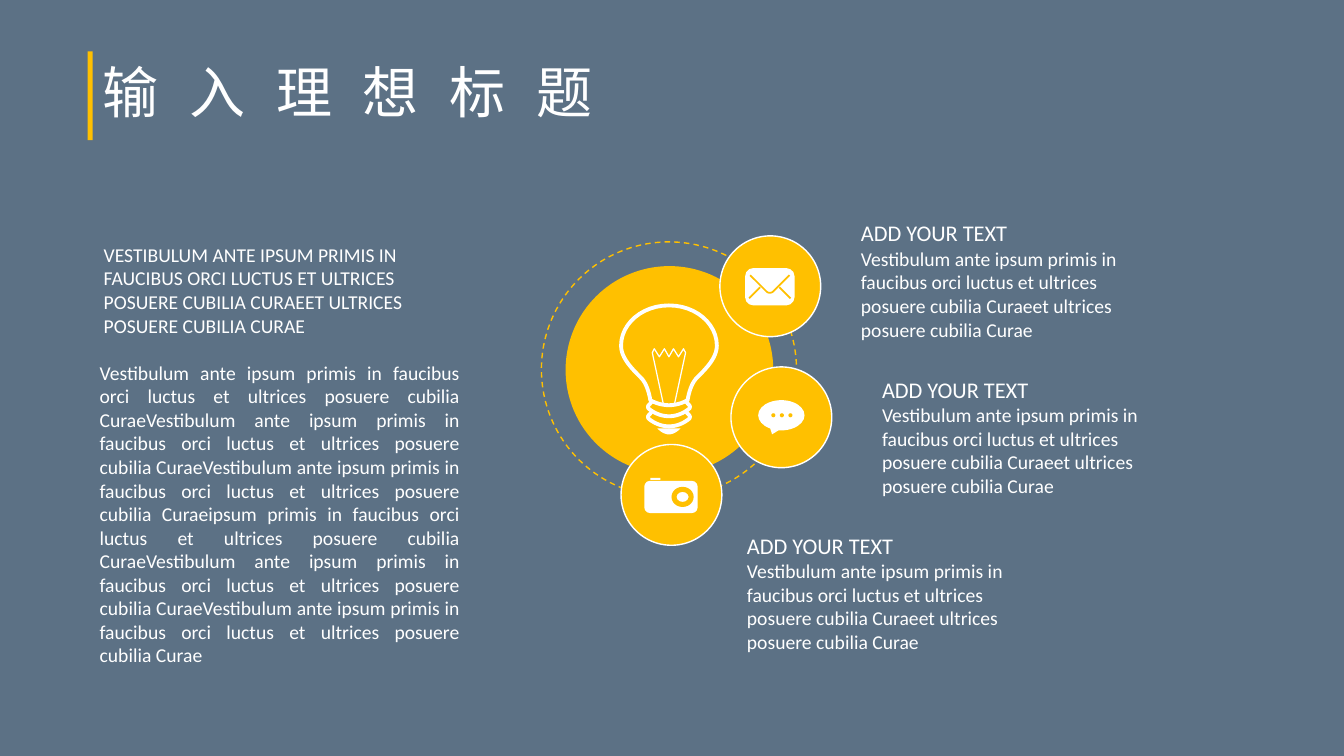
from lxml.etree import SubElement
from pptx import Presentation
from pptx.dml.color import RGBColor
from pptx.enum.dml import MSO_LINE
from pptx.enum.shapes import MSO_SHAPE
from pptx.enum.text import MSO_ANCHOR, PP_ALIGN
from pptx.oxml.ns import qn
from pptx.util import Inches, Pt

SLATE, AMBER, WHITE = "5C7185", "FFC000", "FFFFFF"
LATIN_FONT, CHINESE_FONT = "Calibri", "Noto Sans CJK SC"
BULB_CENTER = 6.635

PHRASE = "Vestibulum ante ipsum primis in faucibus orci luctus et ultrices posuere cubilia Curae"
SHORT_TEXT = PHRASE + "et ultrices posuere cubilia Curae"
LONG_TEXT = PHRASE * 3 + PHRASE.removeprefix("Vestibulum ante ") + PHRASE * 2
ITEMS = [(8.44, 2.13), (8.65, 3.68), (7.31, 5.23)]


def color(hex_string):
    return RGBColor.from_string(hex_string)


def apply_style(shape, fill=None, line=None, width=1.0):
    shape.shadow.inherit = False
    if fill:
        shape.fill.solid()
        shape.fill.fore_color.rgb = color(fill)
    else:
        shape.fill.background()
    if line:
        shape.line.color.rgb = color(line)
        shape.line.width = Pt(width)
    else:
        shape.line.fill.background()


def add_preset(shapes, preset, left, top, width, height, adjustments=(), **style):
    shape = shapes.add_shape(
        preset, Inches(left), Inches(top), Inches(width), Inches(height))
    for index, value in enumerate(adjustments):
        shape.adjustments[index] = value
    apply_style(shape, **style)
    return shape


def add_outline(shapes, points, closed=False, **style):
    vertices = [(Inches(x), Inches(y)) for x, y in points]
    builder = shapes.build_freeform(*vertices[0])
    builder.add_line_segments(vertices[1:], close=closed)
    apply_style(builder.convert_to_shape(), **style)


def curve(start, *segments, steps=12):
    """Return points along joined cubic curves; a segment is two controls and an end."""
    points = [start]
    for first, second, end in segments:
        for step in range(1, steps + 1):
            t = step / steps
            weights = ((1 - t) ** 3, 3 * t * (1 - t) ** 2, 3 * t ** 2 * (1 - t), t ** 3)
            corners = (start, first, second, end)
            points.append(tuple(
                sum(weight * corner[axis] for weight, corner in zip(weights, corners))
                for axis in (0, 1)))
        start = end
    return points


def mirrored(points):
    """Continue a left half, ending on the bulb's axis, with its reflection."""
    return points + [(2 * BULB_CENTER - x, y) for x, y in reversed(points[:-1])]


def add_text(slide, text, left, top, width, height, size=14, font=LATIN_FONT,
             align=PP_ALIGN.LEFT, anchor=MSO_ANCHOR.TOP, line_spacing=None, tracking=None):
    box = slide.shapes.add_textbox(
        Inches(left), Inches(top), Inches(width), Inches(height))
    frame = box.text_frame
    frame.word_wrap = True
    frame.vertical_anchor = anchor
    paragraph = frame.paragraphs[0]
    paragraph.alignment = align
    if line_spacing:
        paragraph.line_spacing = line_spacing
    run = paragraph.add_run()
    run.text = text
    run.font.size = Pt(size)
    run.font.name = font
    run.font.color.rgb = color(WHITE)
    properties = run.font._element
    SubElement(properties, qn("a:ea")).set("typeface", font)
    if tracking:
        properties.set("spc", str(tracking * 100))


def add_title(slide):
    add_preset(slide.shapes, MSO_SHAPE.RECTANGLE, 0.87, 0.51, 0.05, 0.88, fill=AMBER)
    add_text(slide, "输入理想标题", 0.92, 0.22, 11.5, 1.45, size=40, font=CHINESE_FONT,
             anchor=MSO_ANCHOR.MIDDLE, line_spacing=0.9, tracking=22)


def add_circles(slide):
    shapes = slide.shapes
    add_preset(shapes, MSO_SHAPE.OVAL, 5.61, 2.64, 2.06, 2.06, fill=AMBER)
    orbit = add_preset(shapes, MSO_SHAPE.ARC, 5.37, 2.4, 2.53, 2.53,
                       adjustments=(66.43, 42.15), line=AMBER)
    orbit.line.dash_style = MSO_LINE.DASH
    for left, top in [(6.16, 4.41), (7.14, 2.34), (7.25, 3.64)]:
        add_preset(shapes, MSO_SHAPE.OVAL, left, top, 1, 1, fill=AMBER, line=WHITE)


def add_camera(slide):
    shapes = slide.shapes.add_group_shape().shapes
    add_preset(shapes, MSO_SHAPE.RECTANGLE, 6.45, 4.74, 0.1, 0.02, fill=WHITE)
    add_preset(shapes, MSO_SHAPE.ROUNDED_RECTANGLE, 6.39, 4.77, 0.53, 0.32,
               adjustments=(0.18,), fill=WHITE)
    add_preset(shapes, MSO_SHAPE.DONUT, 6.66, 4.83, 0.22, 0.2,
               adjustments=(0.25,), fill=AMBER)


def add_envelope(slide):
    shapes = slide.shapes.add_group_shape().shapes
    add_preset(shapes, MSO_SHAPE.ROUNDED_RECTANGLE, 7.39, 2.66, 0.49, 0.37,
               adjustments=(0.22,), fill=WHITE)
    fold = curve((7.6, 2.89), ((7.62, 2.91), (7.65, 2.91), (7.67, 2.89)))
    flap = [(7.44, 2.73), *fold, (7.83, 2.73)]
    creases = [[(7.54, 2.85), (7.43, 2.96)], [(7.73, 2.85), (7.84, 2.96)]]
    for points in [flap, *creases]:
        add_outline(shapes, points, line=AMBER, width=1.25)


def add_speech_bubble(slide):
    shapes = slide.shapes.add_group_shape().shapes
    add_preset(shapes, MSO_SHAPE.OVAL_CALLOUT, 7.52, 3.97, 0.46, 0.3,
               adjustments=(-0.2, 0.63), fill=WHITE)
    for index in range(3):
        add_preset(shapes, MSO_SHAPE.OVAL, 7.65 + index * 0.085, 4.1, 0.04, 0.04,
                   fill=AMBER)


def add_light_bulb(slide):
    shapes = slide.shapes.add_group_shape().shapes
    glass = curve(
        (BULB_CENTER, 3.03),
        ((6.37, 3.03), (6.16, 3.21), (6.16, 3.43)),
        ((6.16, 3.55), (6.27, 3.66), (6.35, 3.74)),
        ((6.43, 3.81), (6.45, 3.97), (6.45, 3.97)),
        ((6.45, 3.97), (6.53, 4.02), (BULB_CENTER, 4.02)))
    add_outline(shapes, mirrored(glass)[:-1], closed=True, line=WHITE, width=2.75)
    for top in (3.99, 4.09):
        thread = curve(
            (6.46, top),
            ((6.44, top + 0.03), (6.42, top + 0.03), (6.43, top + 0.06)),
            ((6.45, top + 0.08), (6.53, top + 0.14), (BULB_CENTER, top + 0.14)))
        add_outline(shapes, mirrored(thread), line=WHITE, width=2.75)
    tip = curve((6.52, 4.25), ((6.52, 4.25), (6.57, 4.31), (BULB_CENTER, 4.31)))
    add_outline(shapes, mirrored(tip), closed=True, fill=WHITE)
    filament = [(6.58, 4.01), (6.47, 3.5), (6.49, 3.46), (6.54, 3.54),
                (6.59, 3.46), (BULB_CENTER, 3.54)]
    add_outline(shapes, mirrored(filament), line=WHITE, width=0.88)


def add_item(slide, left, top):
    add_text(slide, SHORT_TEXT, left, top + 0.27, 3.15, 1.04)
    add_text(slide, "ADD YOUR TEXT", left, top, 1.98, 0.37, size=16)


def main():
    presentation = Presentation()
    presentation.slide_width = Inches(13.33)
    presentation.slide_height = Inches(7.5)
    slide = presentation.slides.add_slide(presentation.slide_layouts[6])
    slide.background.fill.solid()
    slide.background.fill.fore_color.rgb = color(SLATE)

    add_title(slide)
    add_circles(slide)
    add_camera(slide)
    add_envelope(slide)
    add_speech_bubble(slide)
    add_light_bulb(slide)
    for left, top in ITEMS:
        add_item(slide, left, top)
    add_text(slide, LONG_TEXT, 0.89, 3.53, 3.77, 3.16, align=PP_ALIGN.JUSTIFY)
    add_text(slide, SHORT_TEXT.upper(), 0.93, 2.36, 3.73, 1.05)
    presentation.save("out.pptx")


if __name__ == "__main__":
    main()
